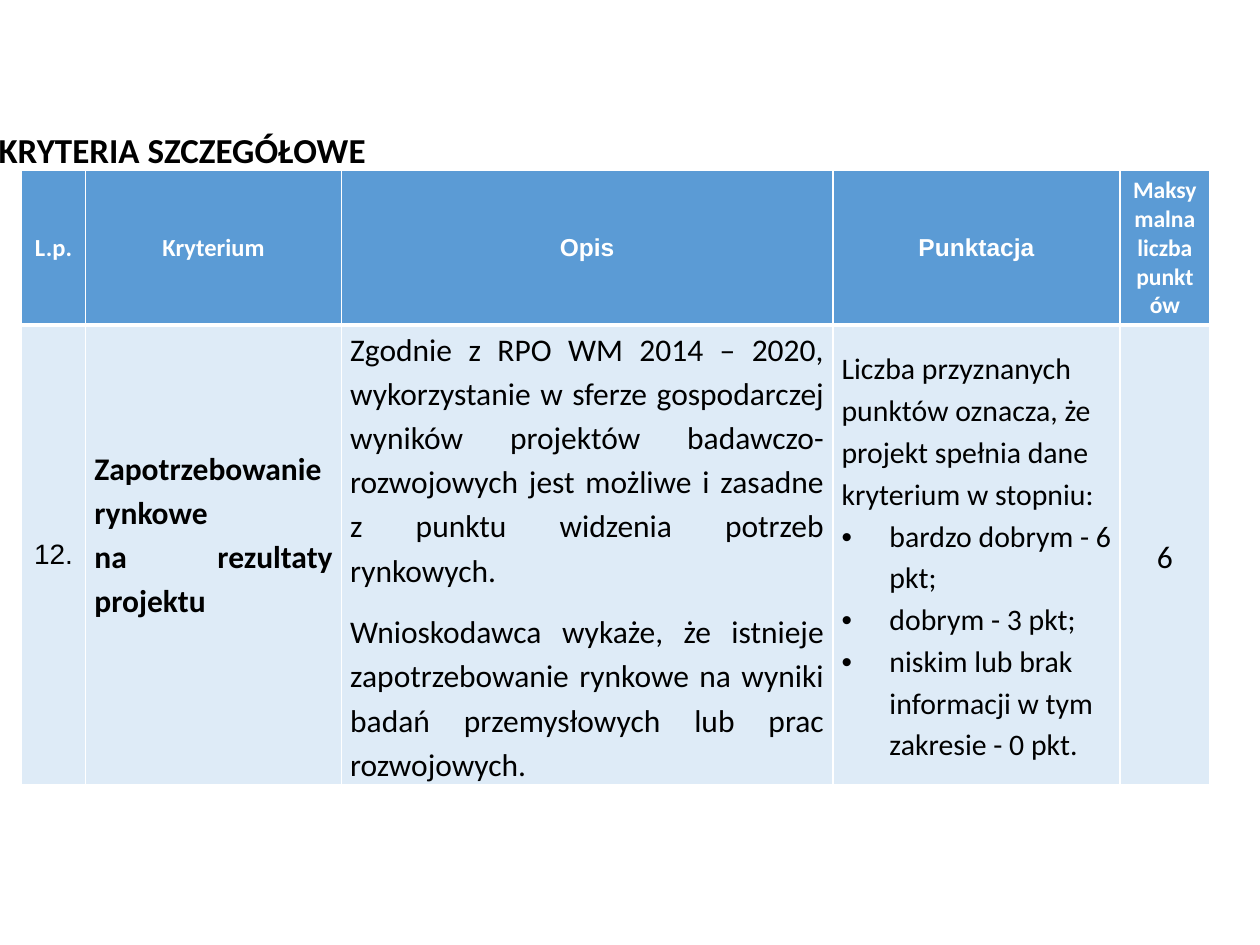
import pptx
import pptx.util
import pptx.oxml
import pptx.oxml.ns
import pptx.dml.color
import pptx.enum.text

Inches, Pt = pptx.util.Inches, pptx.util.Pt
Align = pptx.enum.text.PP_ALIGN
MIDDLE = pptx.enum.text.MSO_ANCHOR.MIDDLE
COLORS = {"head": "5B9BD5", "body": "DEEBF7", "line": "FFFFFF",
          "light": "FFFFFF", "dark": "000000"}

TITLE = "KRYTERIA SZCZEGÓŁOWE"
WIDTHS = [0.51, 2.03, 3.9, 2.28, 0.71]
HEIGHTS = [1.23, 3.65]
# Header: text, font, size
HEAD = [
    ("L.p.", "Calibri", 14),
    ("Kryterium", "Calibri", 14),
    ("Opis", "Arial", 14),
    ("Punktacja", "Arial", 14),
    ("Maksymalna liczba punktów", "Calibri", 13.5),
]
# Body: paragraphs ("• " marks a bullet) and how they are set
BODY = [
    (["12."], dict(name="Arial", size=16)),
    (["Zapotrzebowanie rynkowe", "na rezultaty projektu"],
     dict(size=18, bold=True, align=Align.JUSTIFY, spacing=1.15)),
    (["Zgodnie z RPO WM 2014 – 2020, wykorzystanie w sferze gospodarczej "
      "wyników projektów badawczo-rozwojowych jest możliwe i zasadne\n"
      "z punktu widzenia potrzeb rynkowych.",
      "Wnioskodawca wykaże, że istnieje zapotrzebowanie rynkowe na wyniki "
      "badań przemysłowych lub prac rozwojowych."],
     dict(size=18, align=Align.JUSTIFY, spacing=1.15, gap=10)),
    (["Liczba przyznanych punktów oznacza, że projekt spełnia dane "
      "kryterium w stopniu:",
      "• bardzo dobrym - 6 pkt;",
      "• dobrym - 3 pkt;",
      "• niskim lub brak informacji w tym zakresie - 0 pkt."],
     dict(size=17, spacing=1.15)),
    (["6"], dict(size=18, align=Align.CENTER, spacing=1.15)),
]


def rgb(key):
    return pptx.dml.color.RGBColor.from_string(COLORS[key])


def bullet(para):
    props = para._p.get_or_add_pPr()
    props.set("marL", str(Inches(0.38)))
    props.set("indent", str(-Inches(0.38)))
    ns = pptx.oxml.ns.nsdecls("a")
    props.append(pptx.oxml.parse_xml(f'<a:buFont {ns} typeface="Arial"/>'))
    props.append(pptx.oxml.parse_xml(f'<a:buChar {ns} char="•"/>'))


def write(frame, texts, size, name="Calibri", bold=False, color="dark",
          align=Align.LEFT, spacing=None, gap=0):
    """Fill a text frame; gap is the space in points between paragraphs."""
    frame.word_wrap = True
    for i, text in enumerate(texts):
        para = frame.add_paragraph() if i else frame.paragraphs[0]
        para.text = text.removeprefix("• ").replace("\n", "\v")
        para.alignment = align
        if spacing:
            para.line_spacing = spacing
        if gap and i:
            para.space_before = Pt(gap)
        if text.startswith("• "):
            bullet(para)
        font = para.font
        font.name, font.size, font.bold = name, Pt(size), bold
        font.color.rgb = rgb(color)


def dress(cell, fill, base=1):
    """Set borders, with base points at the bottom, then fill and anchor."""
    props = cell._tc.get_or_add_tcPr()
    for side, width in zip("LRTB", (1, 1, 1, base)):
        props.append(pptx.oxml.parse_xml(
            f'<a:ln{side} {pptx.oxml.ns.nsdecls("a")} w="{Pt(width)}">'
            f'<a:solidFill><a:srgbClr val="{COLORS["line"]}"/></a:solidFill>'
            f'</a:ln{side}>'))
    cell.fill.solid()
    cell.fill.fore_color.rgb = rgb(fill)
    cell.vertical_anchor = MIDDLE


def main():
    deck = pptx.Presentation()
    deck.slide_width, deck.slide_height = Inches(10), Inches(7.5)
    slide = deck.slides.add_slide(deck.slide_layouts[6])

    title = slide.shapes.add_textbox(
        Inches(-0.11), Inches(0.4), Inches(9.31), Inches(1.61)).text_frame
    write(title, [TITLE], 20, bold=True, spacing=0.9)
    title.vertical_anchor = MIDDLE

    table = slide.shapes.add_table(
        len(HEIGHTS), len(WIDTHS), Inches(0.17), Inches(1.35),
        Inches(sum(WIDTHS)), Inches(sum(HEIGHTS))).table
    for col, width in zip(table.columns, WIDTHS):
        col.width = Inches(width)
    for row, height in zip(table.rows, HEIGHTS):
        row.height = Inches(height)

    for i, (text, name, size) in enumerate(HEAD):
        cell = table.cell(0, i)
        dress(cell, "head", 3)
        write(cell.text_frame, [text], size, name, True, "light", Align.CENTER)

    for i, (texts, style) in enumerate(BODY):
        cell = table.cell(1, i)
        dress(cell, "body")
        if i:
            cell.margin_left = cell.margin_right = Inches(0.07)
            cell.margin_top = cell.margin_bottom = 0
        write(cell.text_frame, texts, **style)
    # The criterion sits a little above the middle of its row
    table.cell(1, 1).margin_bottom = Inches(0.35)

    deck.save("out.pptx")


if __name__ == "__main__":
    main()
